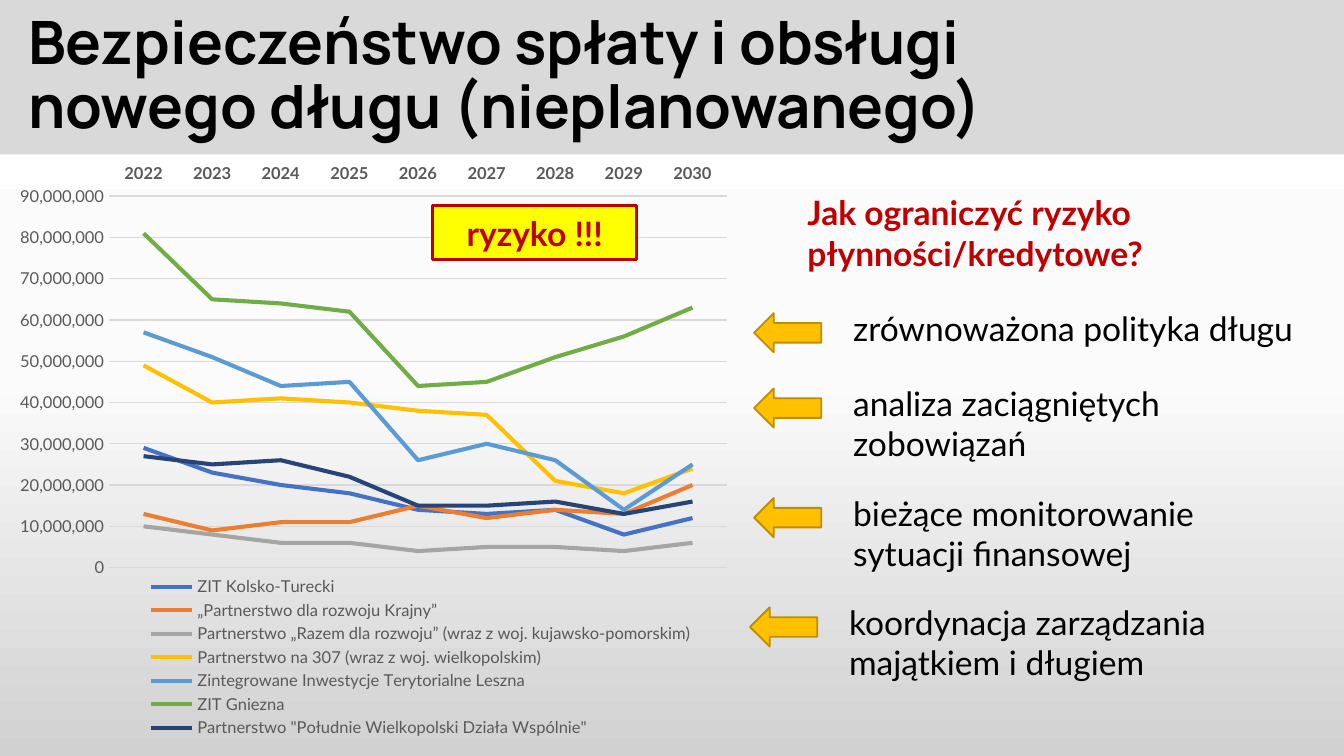
from copy import deepcopy

from lxml.etree import SubElement
from pptx import Presentation
from pptx.chart.data import CategoryChartData
from pptx.dml.color import RGBColor
from pptx.enum.chart import (XL_CHART_TYPE, XL_LEGEND_POSITION,
                             XL_TICK_LABEL_POSITION, XL_TICK_MARK)
from pptx.enum.shapes import MSO_SHAPE
from pptx.enum.text import MSO_ANCHOR, MSO_AUTO_SIZE, PP_ALIGN
from pptx.oxml import parse_xml
from pptx.oxml.ns import nsdecls, qn
from pptx.util import Pt

RED, GOLD, GREY, RULE = "C00000", "FFC000", "595959", "D9D9D9"
YEARS = [str(year) for year in range(2022, 2031)]
MILLION = 1_000_000

# Name, line colour, values in millions
SERIES = [
    ("ZIT Kolsko-Turecki", "4472C4", [29, 23, 20, 18, 14, 13, 14, 8, 12]),
    ("„Partnerstwo dla rozwoju Krajny”", "ED7D31",
     [13, 9, 11, 11, 15, 12, 14, 13, 20]),
    ("Partnerstwo „Razem dla rozwoju” (wraz z woj. kujawsko-pomorskim)",
     "A5A5A5", [10, 8, 6, 6, 4, 5, 5, 4, 6]),
    ("Partnerstwo na 307 (wraz z woj. wielkopolskim)", GOLD,
     [49, 40, 41, 40, 38, 37, 21, 18, 24]),
    ("Zintegrowane Inwestycje Terytorialne Leszna", "5B9BD5",
     [57, 51, 44, 45, 26, 30, 26, 14, 25]),
    ("ZIT Gniezna", "70AD47", [81, 65, 64, 62, 44, 45, 51, 56, 63]),
    ('Partnerstwo "Południe Wielkopolski Działa Wspólnie"', "264478",
     [27, 25, 26, 22, 15, 15, 16, 13, 16]),
]

# Left and top of each arrow, then its text
ADVICE = [
    (404, 167.8, "zrównoważona polityka długu"),
    (404, 208.1, "analiza zaciągniętych zobowiązań"),
    (404, 266.8, "bieżące monitorowanie sytuacji finansowej"),
    (401.8, 325.4, "koordynacja zarządzania majątkiem i długiem"),
]


def tint(code):
    return RGBColor.from_string(code)


def style(font, size, color, bold=False, name="Lato"):
    font.name, font.size, font.bold = name, Pt(size), bold
    font.color.rgb = tint(color)


def add_run(para, text, *look, **more):
    run = para.add_run()
    run.text = text
    style(run.font, *look, **more)


def add_box(slide, kind, box, fill, line=None, width=1):
    shape = slide.shapes.add_shape(kind, *map(Pt, box))
    shape.shadow.inherit = False
    shape.fill.solid()
    shape.fill.fore_color.rgb = tint(fill)
    if line:
        shape.line.color.rgb = tint(line)
        shape.line.width = Pt(width)
    else:
        shape.line.fill.background()
    return shape


def add_text(slide, box, text, *look):
    frame = slide.shapes.add_textbox(*map(Pt, box)).text_frame
    frame.word_wrap = True
    add_run(frame.paragraphs[0], text, *look)


def set_back(slide):
    fill = slide.background.fill
    fill.gradient()
    fill.gradient_angle = 270
    stops = slide.element.find(".//" + qn("a:gsLst"))
    stops.insert(1, deepcopy(stops[0]))
    looks = [(0, "FFFFFF"), (0.5, "FBFBFB"), (1, "D1D1D1")]
    for stop, (place, color) in zip(fill.gradient_stops, looks):
        stop.position = place
        stop.color.rgb = tint(color)


def set_title(slide):
    band = add_box(slide, MSO_SHAPE.RECTANGLE, (-1.4, -0.7, 721.4, 83.5), RULE)
    slide.shapes.element.insert(2, band.element)
    title = slide.shapes.title
    title.left, title.top, title.width, title.height = map(
        Pt, (7.9, 2.2, 620.6, 78.5))
    frame = title.text_frame
    frame.auto_size = MSO_AUTO_SIZE.NONE
    frame.word_wrap = True
    frame.vertical_anchor = MSO_ANCHOR.MIDDLE
    para = frame.paragraphs[0]
    para.alignment = PP_ALIGN.LEFT
    para.line_spacing = 0.9
    look = (32, "000000", True, "Manrope")
    add_run(para, "Bezpieczeństwo spłaty i obsługi", *look)
    para.add_line_break()
    add_run(para, "nowego długu (nieplanowanego)", *look)


def set_place(parent, spot, box, inner=False):
    """Give a chart part a manual layout, in fractions of the chart."""
    for old in parent.findall(qn("c:layout")):
        parent.remove(old)
    layout = parse_xml(f"<c:layout {nsdecls('c')}><c:manualLayout/></c:layout>")
    rows = [("layoutTarget", "inner")] if inner else []
    rows += [("xMode", "edge"), ("yMode", "edge")]
    rows += zip("xywh", box)
    for tag, value in rows:
        SubElement(layout[0], qn("c:" + tag)).set("val", str(value))
    parent.insert(spot, layout)


def set_axes(chart):
    cat, val = chart.category_axis, chart.value_axis
    for axis in (cat, val):
        axis.major_tick_mark = axis.minor_tick_mark = XL_TICK_MARK.NONE
        style(axis.tick_labels.font, 9, GREY, bold=axis is cat)
    cat.tick_label_position = XL_TICK_LABEL_POSITION.HIGH
    val.minimum_scale, val.maximum_scale = 0, 90 * MILLION
    val.major_unit = 10 * MILLION
    val.tick_labels.number_format = "#,##0"
    val.tick_labels.number_format_is_linked = False
    val.format.line.fill.background()
    for line in (cat.format.line, val.major_gridlines.format.line):
        line.color.rgb = tint(RULE)
        line.width = Pt(0.75)


def add_lines(slide):
    data = CategoryChartData(number_format="#,##0")
    data.categories = YEARS
    for name, _, values in SERIES:
        data.add_series(name, [value * MILLION for value in values])
    chart = slide.shapes.add_chart(
        XL_CHART_TYPE.LINE, *map(Pt, (10.8, 87.1, 380.9, 316.1)), data).chart
    chart.has_title = False
    style(chart.font, 10, "000000")
    chart.plots[0].vary_by_categories = False
    for line, (_, color, _) in zip(chart.plots[0].series, SERIES):
        line.smooth = False
        line.format.line.color.rgb = tint(color)
        line.format.line.width = Pt(2.25)
    set_axes(chart)
    # Legend under the plot, one entry a line
    chart.has_legend = True
    key = chart.legend
    key.position = XL_LEGEND_POSITION.BOTTOM
    key.include_in_layout = False
    style(key.font, 9, GREY)
    plot = chart.element.find(".//" + qn("c:plotArea"))
    set_place(plot, 0, (0.108, 0.037, 0.886, 0.643), inner=True)
    legend = chart.element.find(".//" + qn("c:legend"))
    set_place(legend, 1, (0.13, 0.69, 0.85, 0.29))


def add_advice(slide):
    add_text(slide, (425.5, 99.4, 259.2, 51),
             "Jak ograniczyć ryzyko płynności/kredytowe?", 18, RED, True)
    for left, top, text in ADVICE:
        arrow = add_box(slide, MSO_SHAPE.RIGHT_ARROW, (left, top, 36, 21),
                        GOLD, "BD8E00")
        arrow.rotation = 180
        add_text(slide, (left + 46, top - 6.5, 259.2, 51), text, 18, "000000")


def add_badge(slide):
    badge = add_box(slide, MSO_SHAPE.RECTANGLE, (231.8, 110.2, 109.4, 29),
                    "FFFF00", RED, 1.5)
    frame = badge.text_frame
    frame.word_wrap = True
    frame.paragraphs[0].alignment = PP_ALIGN.CENTER
    add_run(frame.paragraphs[0], "ryzyko !!!", 18, RED, True)


def main():
    deck = Presentation()
    deck.slide_width, deck.slide_height = Pt(720), Pt(405)
    slide = deck.slides.add_slide(deck.slide_layouts[5])
    set_back(slide)
    set_title(slide)
    add_advice(slide)
    add_lines(slide)
    add_badge(slide)
    deck.save("out.pptx")


if __name__ == "__main__":
    main()
